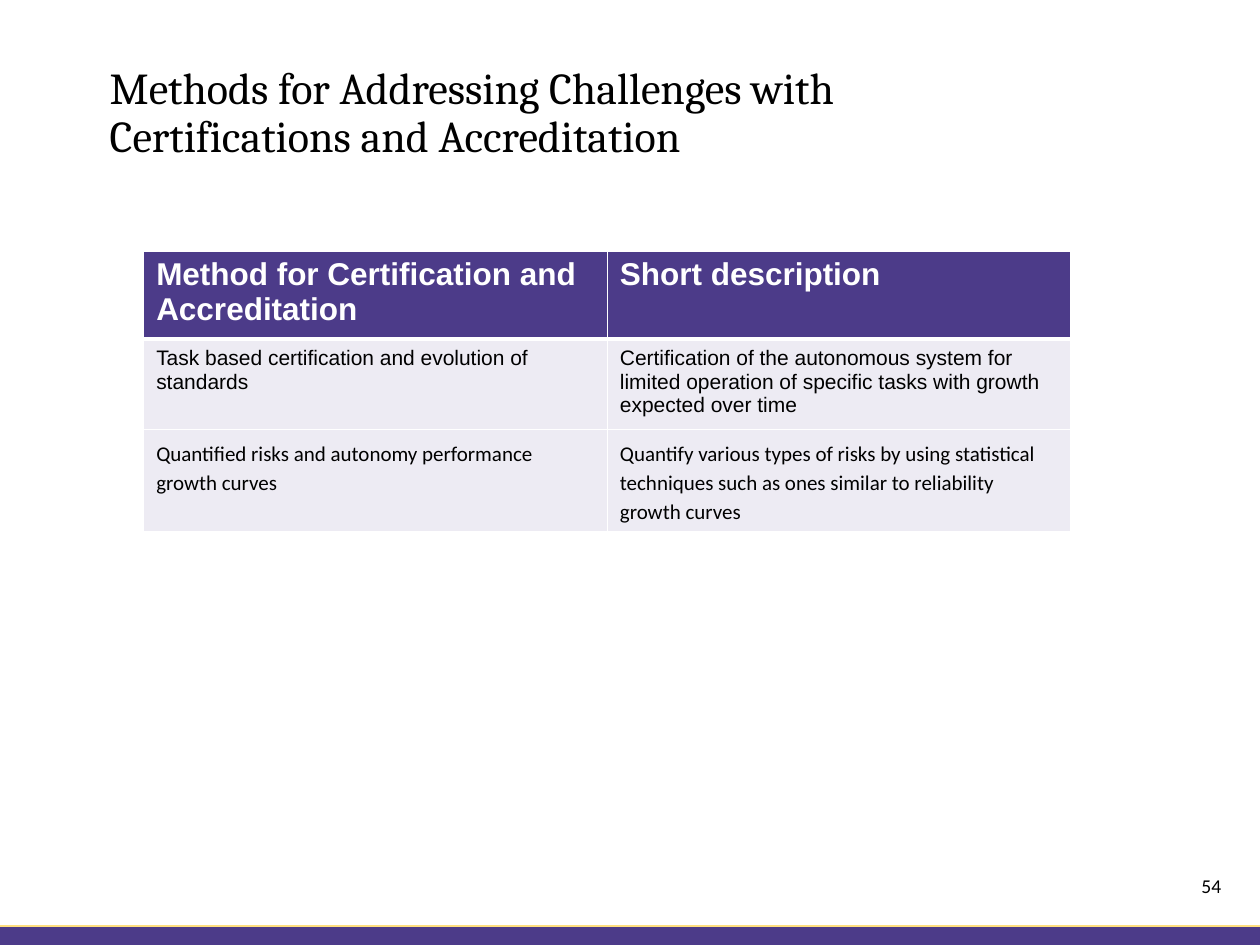
from lxml import etree
from pptx import Presentation
from pptx.dml.color import RGBColor
from pptx.enum.shapes import MSO_CONNECTOR, MSO_SHAPE
from pptx.enum.text import MSO_ANCHOR, PP_ALIGN
from pptx.oxml.ns import qn
from pptx.util import Inches, Pt

TOP, LEFT, RIGHT = MSO_ANCHOR.TOP, PP_ALIGN.LEFT, PP_ALIGN.RIGHT

COLORS = {"purple": "4C3B89", "gold": "FFDF7F", "lavender": "EDEBF3",
          "black": "000000", "white": "FFFFFF"}
TITLE = "Methods for Addressing Challenges with\vCertifications and Accreditation"
PAGE_NUMBER = "54"
METHODS = [
    ("Method for Certification and Accreditation", "Short description"),
    ("Task based certification and evolution of standards",
     "Certification of the autonomous system for limited operation of specific "
     "tasks with growth expected over time"),
    ("Quantified risks and autonomy performance growth curves",
     "Quantify various types of risks by using statistical techniques such as "
     "ones similar to reliability growth curves"),
]
# One per table row: font, size, text colour, bold, fill, line spacing, space after, bottom border
ROW_STYLES = [
    ("Arial", 18, "white", True, "purple", 1, 0, 3),
    ("Arial", 12, "black", False, "lavender", 1, 0, 1),
    ("Calibri", 12, "black", False, "lavender", 1.15, 10, 1),
]


def color(name):
    return RGBColor.from_string(COLORS[name])


def set_font(paragraph, face, size, color_name, bold=False):
    font = paragraph.font
    font.name, font.size, font.bold = face, Pt(size), bold
    font.color.rgb = color(color_name)


def set_borders(cell, top, bottom):
    """Draw white borders; they must come before the fill in the cell's XML."""
    properties = cell._tc.get_or_add_tcPr()
    for tag, width in (("a:lnL", 1), ("a:lnR", 1), ("a:lnT", top), ("a:lnB", bottom)):
        border = etree.SubElement(properties, qn(tag), w=str(Pt(width)))
        fill = etree.SubElement(border, qn("a:solidFill"))
        etree.SubElement(fill, qn("a:srgbClr"), val=COLORS["white"])


def add_footer(slide):
    band = slide.shapes.add_shape(MSO_SHAPE.RECTANGLE, 0, Inches(7.35), Inches(10), Inches(0.15))
    band.shadow.inherit = False
    band.fill.solid()
    band.fill.fore_color.rgb = color("purple")
    band.line.fill.background()
    rule = slide.shapes.add_connector(
        MSO_CONNECTOR.STRAIGHT, 0, Inches(7.35), Inches(10), Inches(7.35))
    rule.line.color.rgb = color("gold")
    rule.line.width = Pt(1)
    etree.SubElement(rule._element.spPr, qn("a:effectLst"))

    number = slide.shapes.add_textbox(Inches(7.54), Inches(6.89), Inches(2.25), Inches(0.4))
    number.text_frame.word_wrap = True
    paragraph = number.text_frame.paragraphs[0]
    paragraph.text = PAGE_NUMBER
    paragraph.alignment = RIGHT
    set_font(paragraph, "Calibri", 11.2, "black")


def add_title(slide):
    title = slide.shapes.title
    title.left, title.top = Inches(0.77), Inches(0.48)
    title.width, title.height = Inches(7.33), Inches(0.59)
    title.text_frame.vertical_anchor = TOP
    title.text_frame.word_wrap = True
    paragraph = title.text_frame.paragraphs[0]
    paragraph.text = TITLE
    paragraph.alignment = LEFT
    paragraph.line_spacing = 0.9
    set_font(paragraph, "Cambria", 25.2, "black")


def add_methods_table(slide):
    table = slide.shapes.add_table(
        len(METHODS), 2, Inches(1.14), Inches(1.99), Inches(7.36), Inches(1.68)).table
    table.horz_banding = False
    top_border = 1
    for row, texts, style in zip(table.rows, METHODS, ROW_STYLES):
        face, size, text_color, bold, fill, spacing, after, bottom_border = style
        for cell, text in zip(row.cells, texts):
            set_borders(cell, top_border, bottom_border)
            cell.fill.solid()
            cell.fill.fore_color.rgb = color(fill)
            cell.margin_top = cell.margin_bottom = Inches(0.05 if bold else 0.06)
            paragraph = cell.text_frame.paragraphs[0]
            paragraph.text = text
            paragraph.line_spacing = spacing
            paragraph.space_after = Pt(after)
            set_font(paragraph, face, size, text_color, bold)
        top_border = bottom_border


def main():
    presentation = Presentation()
    presentation.slide_width, presentation.slide_height = Inches(10), Inches(7.5)
    slide = presentation.slides.add_slide(presentation.slide_layouts[5])
    add_footer(slide)
    add_title(slide)
    add_methods_table(slide)
    presentation.save("out.pptx")


if __name__ == "__main__":
    main()
